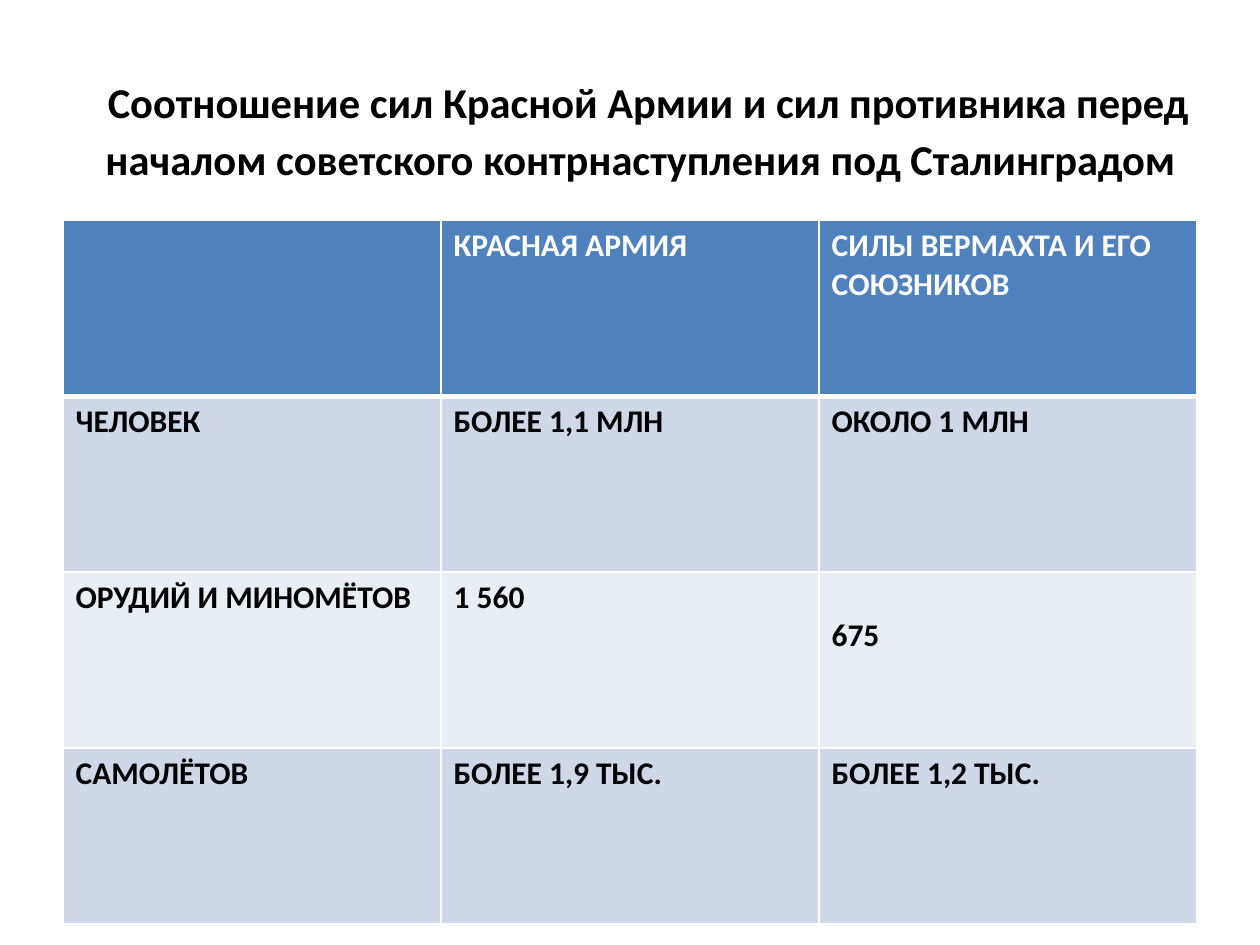
from pptx import Presentation
from pptx import util as u
from pptx.dml import color
from pptx.enum import text
from pptx.oxml import parse_xml
from pptx.oxml.ns import nsdecls

Pt = u.Pt


def rgb(value):
    return color.RGBColor.from_string(value)


class Deck:
    font = "Calibri"
    ink, paper = "000000", "FFFFFF"
    header, bands = "4F81BD", ("D0D8E8", "E9EDF4")

    def __init__(self, width, height):
        self.prs = Presentation()
        self.prs.slide_width, self.prs.slide_height = Pt(width), Pt(height)
        self.s = self.prs.slides.add_slide(self.prs.slide_layouts[6])

    def run(self, p, words, size, fill):
        r = p.add_run()
        r.text = words
        r.font.name, r.font.size, r.font.bold = self.font, Pt(size), True
        r.font.color.rgb = rgb(fill)

    def title(self, x, y, w, h, runs):
        tf = self.s.shapes.add_textbox(Pt(x), Pt(y), Pt(w), Pt(h)).text_frame
        tf.word_wrap = True
        tf.vertical_anchor = text.MSO_ANCHOR.MIDDLE
        p = tf.paragraphs[0]
        p.alignment = text.PP_ALIGN.CENTER
        for words, size in runs:
            self.run(p, words, size, self.ink)

    def borders(self, cell, **widths):
        tcPr = cell._tc.get_or_add_tcPr()
        for i, (side, width) in enumerate(widths.items()):
            tcPr.insert(i, parse_xml(
                f'<a:ln{side} {nsdecls("a")} w="{Pt(width)}"><a:solidFill>'
                f'<a:srgbClr val="{self.paper}"/></a:solidFill></a:ln{side}>'))

    def table(self, x, y, w, h, rows, size):
        t = self.s.shapes.add_table(len(rows), len(rows[0]),
                                    Pt(x), Pt(y), Pt(w), Pt(h)).table
        for i, row in enumerate(rows):
            fill = self.bands[(i - 1) % 2] if i else self.header
            for j, words in enumerate(row):
                cell = t.cell(i, j)
                cell.fill.solid()
                cell.fill.fore_color.rgb = rgb(fill)
                # The rule under the header is heavier
                self.borders(cell, L=1, R=1, T=3 if i == 1 else 1,
                             B=1 if i else 3)
                if words:
                    self.run(cell.text_frame.paragraphs[0], words, size,
                             self.ink if i else self.paper)
        return t


def main():
    deck = Deck(720, 540)

    # Title; the larger leading space sets the height of the first line
    deck.title(12, 21.6, 708, 90, [
        (" ", 39.6),
        ("Соотношение сил Красной Армии и сил противника перед началом "
         "советского контрнаступления под Сталинградом", 24.3)])

    # Comparison of forces
    t = deck.table(36, 126, 648, 401.76, [
        ("", "КРАСНАЯ АРМИЯ", "СИЛЫ ВЕРМАХТА И ЕГО СОЮЗНИКОВ"),
        ("ЧЕЛОВЕК", "БОЛЕЕ 1,1 МЛН", "ОКОЛО 1 МЛН"),
        ("OРУДИЙ И МИНОМЁТОВ", "1 560", "675"),
        ("САМОЛЁТОВ", "БОЛЕЕ 1,9 ТЫС.", "БОЛЕЕ 1,2 ТЫС."),
    ], 18)

    # This figure sits one line lower than its row
    t.cell(2, 2).margin_top = Pt(25.6)

    deck.prs.save("out.pptx")


if __name__ == "__main__":
    main()
